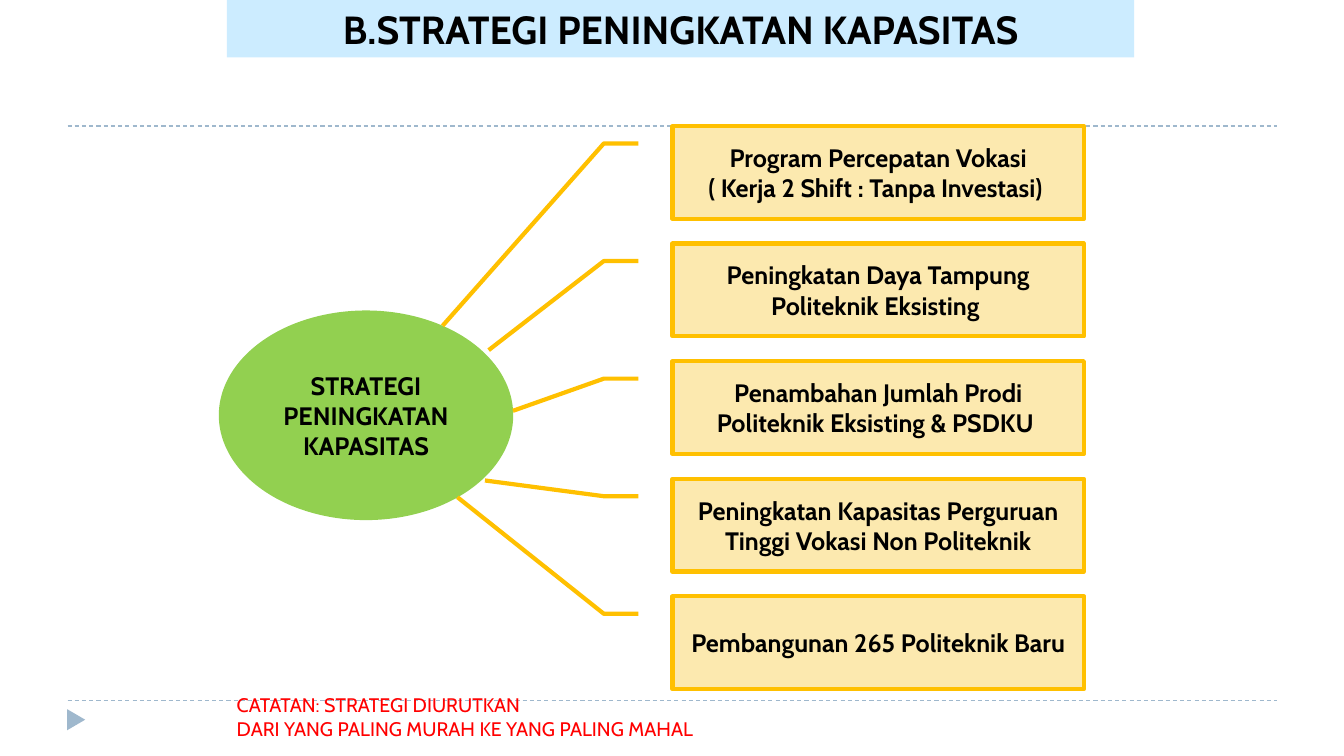
"""Build the capacity strategy slide: one goal linked to five ranked strategies."""
import pptx
import pptx.dml.color
import pptx.enum.dml
import pptx.enum.shapes
import pptx.enum.text
import pptx.oxml
import pptx.util

Inches, Pt = pptx.util.Inches, pptx.util.Pt
RGBColor = pptx.dml.color.RGBColor
SHAPE = pptx.enum.shapes.MSO_SHAPE
ALIGN = pptx.enum.text.PP_ALIGN
ANCHOR = pptx.enum.text.MSO_ANCHOR

TITLE = ["B.STRATEGI PENINGKATAN KAPASITAS"]
GOAL = ["STRATEGI", "PENINGKATAN KAPASITAS"]
NOTE = ["CATATAN: STRATEGI DIURUTKAN", "DARI YANG PALING MURAH KE YANG PALING MAHAL"]
STRATEGIES = [
    (["Program Percepatan Vokasi", "( Kerja 2 Shift : Tanpa Investasi) "], (2.154, -0.559)),
    (["Peningkatan Daya Tampung", "Politeknik Eksisting "], (1.149, -0.447)),
    (["Penambahan Jumlah Prodi Politeknik Eksisting & PSDKU "], (0.535, -0.388)),
    (["Peningkatan Kapasitas Perguruan Tinggi Vokasi Non Politeknik"], (0.018, -0.456)),
    (["Pembangunan 265 Politeknik Baru"], (-1.07, -0.523)),
]
CALLOUT_ELBOW = (0.188, -0.083, 0.188, -0.167)
STRATEGY_TOP, STRATEGY_STEP = 1.25, 3.5 / 3
RULE_TOPS = (6.95, 1.25)

FONT = "Cabin"
BLACK = RGBColor(0x00, 0x00, 0x00)
RED = RGBColor(0xFF, 0x00, 0x00)
GREEN = RGBColor(0x92, 0xD0, 0x50)
SKY = RGBColor(0xCC, 0xEC, 0xFF)
CREAM = RGBColor(0xFC, 0xE9, 0xAF)
GOLD = RGBColor(0xFF, 0xC0, 0x00)
STEEL = RGBColor(0x9F, 0xB8, 0xCD)


def write(sp, lines, size, color=BLACK, bold=True, align=ALIGN.CENTER, anchor=ANCHOR.MIDDLE, wrap=True):
    tf = sp.text_frame
    tf.word_wrap = wrap
    tf.vertical_anchor = anchor
    for i, line in enumerate(lines):
        p = tf.add_paragraph() if i else tf.paragraphs[0]
        p.text = line
        p.alignment = align
        p.font.name, p.font.size, p.font.bold = FONT, Pt(size), bold
        p.font.color.rgb = color


def add_shape(slide, kind, box, fill, line=None):
    sp = slide.shapes.add_shape(kind, *map(Inches, box))
    sp.shadow.inherit = False
    sp.fill.solid()
    sp.fill.fore_color.rgb = fill
    if line is None:
        sp.line.fill.background()
    else:
        sp.line.color.rgb = line
        sp.line.width = Pt(3)
    return sp


def add_rule(slide, top):
    rule = slide.shapes.add_connector(
        pptx.enum.shapes.MSO_CONNECTOR.STRAIGHT, Inches(0.67), Inches(top), Inches(12.67), Inches(top))
    rule.line.color.rgb = STEEL
    rule.line.width = Pt(0.75)
    rule.line.dash_style = pptx.enum.dml.MSO_LINE.DASH
    rule._element.spPr.append(pptx.oxml.parse_xml(
        '<a:effectLst xmlns:a="http://schemas.openxmlformats.org/drawingml/2006/main"/>'))


def main():
    prs = pptx.Presentation()
    prs.slide_width, prs.slide_height = Inches(13.33), Inches(7.5)
    slide = prs.slides.add_slide(prs.slide_layouts[6])

    for top in RULE_TOPS:
        add_rule(slide, top)
    marker = add_shape(slide, SHAPE.ISOSCELES_TRIANGLE, (0.65, 7.05, 0.21, 0.18), STEEL)
    marker.rotation = 90

    banner = add_shape(slide, SHAPE.RECTANGLE, (2.25, 0, 9, 0.57), SKY)
    write(banner, TITLE, 28, anchor=ANCHOR.TOP)
    goal = add_shape(slide, SHAPE.OVAL, (2.17, 3.08, 2.92, 2.08), GREEN)
    write(goal, GOAL, 18)

    for i, (lines, tip) in enumerate(STRATEGIES):
        box = (6.67, STRATEGY_TOP + i * STRATEGY_STEP, 4.08, 0.92)
        sp = add_shape(slide, SHAPE.LINE_CALLOUT_2, box, CREAM, GOLD)
        for j, value in enumerate(CALLOUT_ELBOW + tip):
            sp.adjustments[j] = value
        write(sp, lines, 18)

    note = slide.shapes.add_textbox(Inches(2.25), Inches(6.83), Inches(4.9), Inches(0.57))
    write(note, NOTE, 14, RED, False, ALIGN.LEFT, ANCHOR.TOP, False)

    prs.save("out.pptx")


if __name__ == "__main__":
    main()
